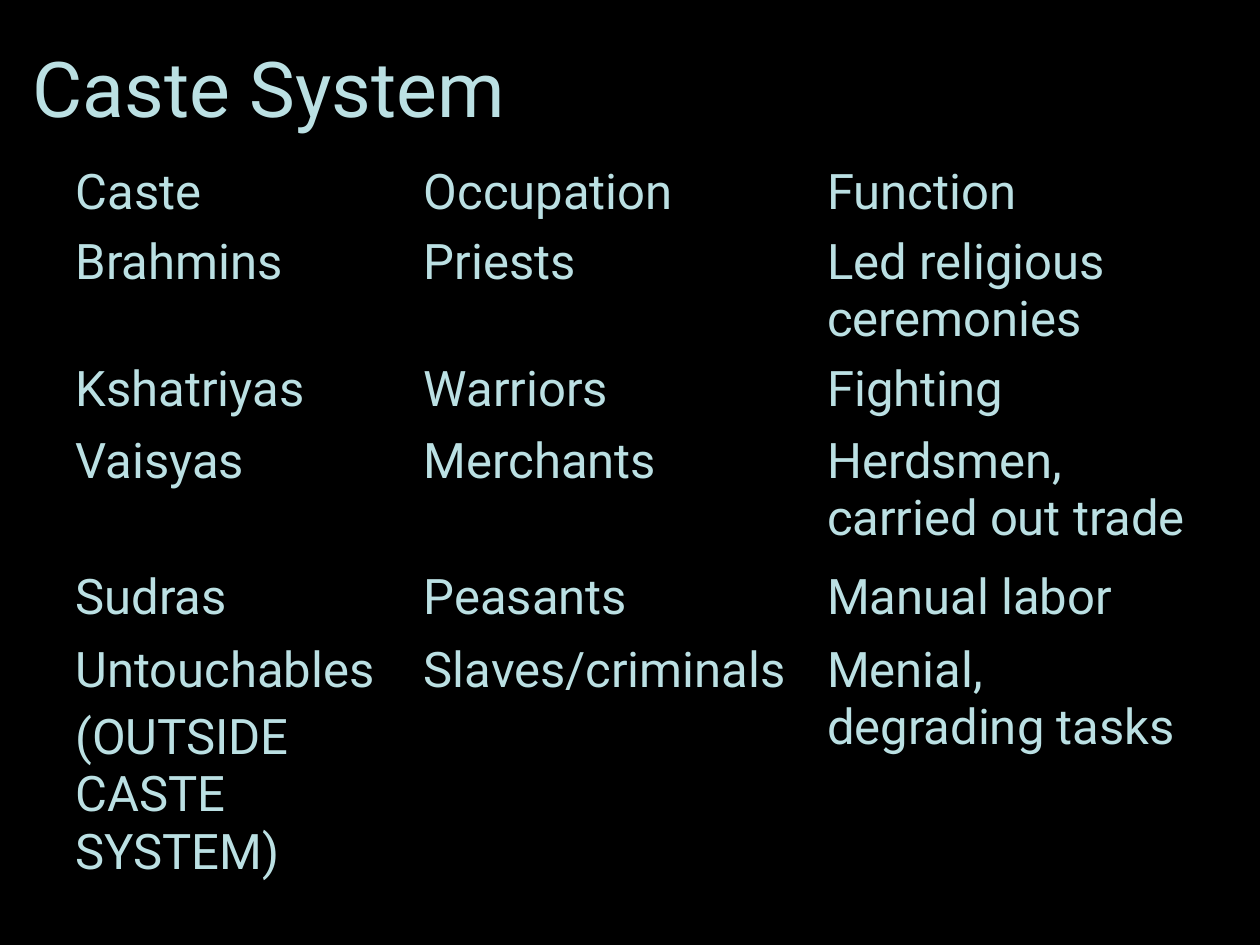
from dataclasses import dataclass

from lxml.etree import SubElement
from pptx import Presentation
from pptx.dml.color import RGBColor
from pptx.enum.text import MSO_ANCHOR, PP_ALIGN
from pptx.oxml.ns import qn
from pptx.util import Pt


@dataclass(frozen=True)
class Theme:
    font: str = "Roboto"
    background: str = "000000"
    text: str = "BBE0E3"
    border: str = "000000"
    title_size: float = 44
    body_size: float = 28
    paragraph_gap: float = 5.6
    outer_border: float = 2.25
    inner_border: float = 1


THEME = Theme()
COLUMN_WIDTHS = (199, 230.5, 230.5)
ROW_HEIGHTS = (36, 59, 41, 78, 41.5, 59)
CASTES = (
    ("Caste", "Occupation", "Function"),
    ("Brahmins", "Priests", "Led religious ceremonies"),
    ("Kshatriyas", "Warriors", "Fighting"),
    ("Vaisyas", "Merchants", "Herdsmen, carried out trade"),
    ("Sudras", "Peasants", "Manual labor"),
    ("Untouchables\n(OUTSIDE CASTE SYSTEM)", "Slaves/criminals",
     "Menial, degrading tasks"),
)


def add_text(paragraph, text, size):
    paragraph.alignment = PP_ALIGN.LEFT
    run = paragraph.add_run()
    run.text = text
    run.font.name = THEME.font
    run.font.size = Pt(size)
    run.font.color.rgb = RGBColor.from_string(THEME.text)


def add_title(slide, text):
    title = slide.shapes.title
    title.left, title.top, title.width, title.height = (
        Pt(11.5), Pt(4.5), Pt(699), Pt(90))
    title.text_frame.vertical_anchor = MSO_ANCHOR.MIDDLE
    add_text(title.text_frame.paragraphs[0], text, THEME.title_size)


def set_borders(cell, is_outer):
    """Draw the cell's four edges, heavier where they bound the table."""
    properties = cell._tc.get_or_add_tcPr()
    for position, (edge, outer) in enumerate(is_outer.items()):
        width = THEME.outer_border if outer else THEME.inner_border
        line = properties.makeelement(qn(f"a:{edge}"), {"w": str(Pt(width))})
        fill = SubElement(line, qn("a:solidFill"))
        SubElement(fill, qn("a:srgbClr"), val=THEME.border)
        properties.insert(position, line)


def fill_cell(cell, text):
    cell.fill.background()
    frame = cell.text_frame
    for index, line in enumerate(text.split("\n")):
        paragraph = frame.add_paragraph() if index else frame.paragraphs[0]
        if index:
            paragraph.space_before = Pt(THEME.paragraph_gap)
        add_text(paragraph, line, THEME.body_size)


def add_caste_table(slide):
    last_row, last_column = len(CASTES) - 1, len(COLUMN_WIDTHS) - 1
    table = slide.shapes.add_table(
        len(CASTES), len(COLUMN_WIDTHS),
        Pt(36), Pt(90), Pt(sum(COLUMN_WIDTHS)), Pt(424)).table
    table.first_row = table.horz_banding = False
    for column, width in zip(table.columns, COLUMN_WIDTHS):
        column.width = Pt(width)
    for row, height in zip(table.rows, ROW_HEIGHTS):
        row.height = Pt(height)
    for r, caste in enumerate(CASTES):
        for c, text in enumerate(caste):
            cell = table.cell(r, c)
            fill_cell(cell, text)
            set_borders(cell, {"lnL": c == 0, "lnR": c == last_column,
                               "lnT": r == 0, "lnB": r == last_row})


def main():
    presentation = Presentation()
    presentation.slide_width, presentation.slide_height = Pt(720), Pt(540)
    slide = presentation.slides.add_slide(presentation.slide_layouts[5])
    slide.background.fill.solid()
    slide.background.fill.fore_color.rgb = RGBColor.from_string(THEME.background)
    add_title(slide, "Caste System")
    add_caste_table(slide)
    presentation.save("out.pptx")


if __name__ == "__main__":
    main()
